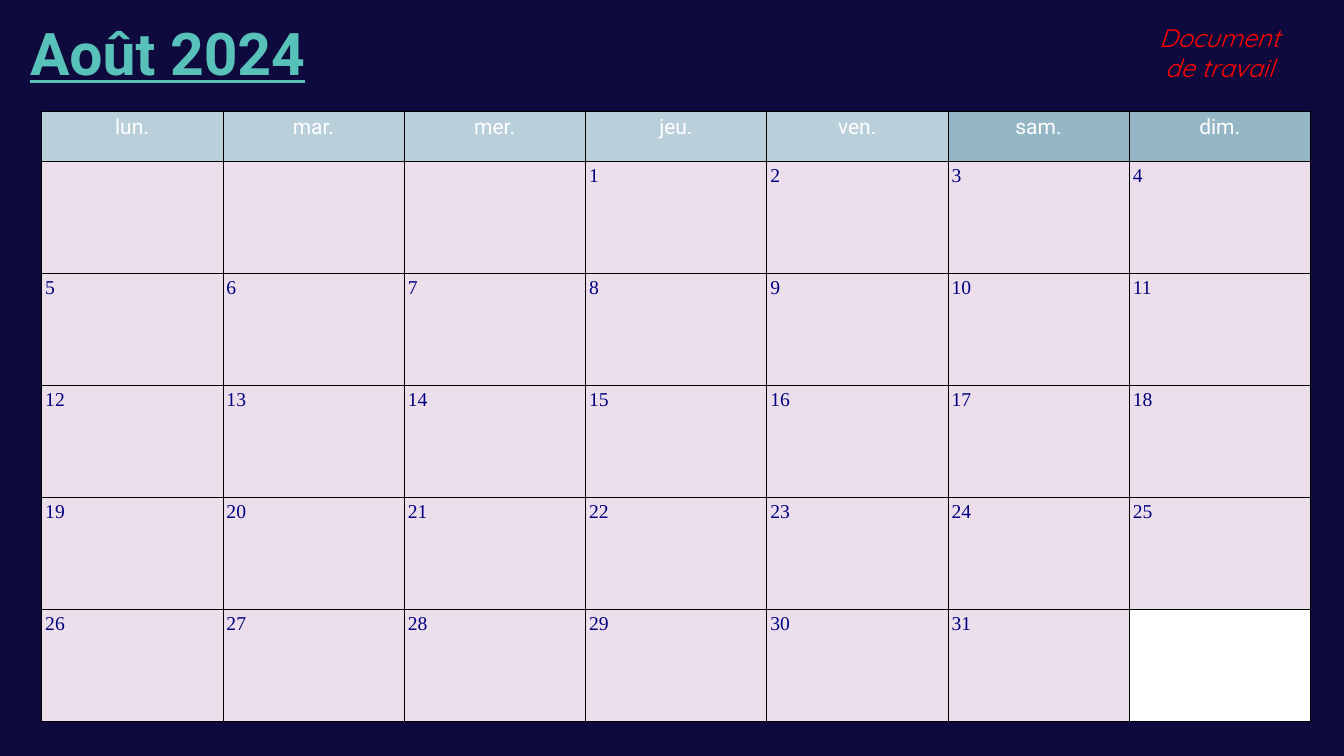
"""Build a calendar slide for August 2024."""
from dataclasses import dataclass

import lxml.etree
import pptx
import pptx.dml.color
import pptx.enum.shapes
import pptx.enum.text
import pptx.oxml.ns
import pptx.util

Pt = pptx.util.Pt
RGBColor = pptx.dml.color.RGBColor
Align = pptx.enum.text.PP_ALIGN

NAVY = RGBColor(0x0F, 0x0A, 0x3D)
TEAL = RGBColor(0x58, 0xC1, 0xBA)
RED = RGBColor(0xFF, 0x00, 0x00)
WHITE = RGBColor(0xFF, 0xFF, 0xFF)
BLACK = RGBColor(0x00, 0x00, 0x00)
DAY_BLUE = RGBColor(0x00, 0x00, 0x80)
WEEKDAY_FILL = RGBColor(0xB9, 0xCF, 0xD9)
WEEKEND_FILL = RGBColor(0x95, 0xB6, 0xC5)
DAY_FILL = RGBColor(0xEC, 0xDF, 0xEB)

WEEKDAYS = ("lun.", "mar.", "mer.", "jeu.", "ven.", "sam.", "dim.")
FIRST_SATURDAY_COLUMN = 5
FIRST_DAY_COLUMN = 3
DAYS_IN_MONTH = 31
WEEKS = 5

SLIDE_WIDTH, SLIDE_HEIGHT = 960, 540
TABLE_LEFT, TABLE_TOP = 29.6, 79.4
COLUMN_WIDTH, HEADER_HEIGHT, WEEK_HEIGHT = 129.5, 36, 80
CELL_MARGIN = 2.7
BORDER_WIDTH = 0.25


@dataclass(frozen=True)
class CalendarCell:
    row: int
    column: int
    text: str
    fill: RGBColor
    font: str = "Times New Roman"
    size: float = 14
    color: RGBColor = DAY_BLUE
    align: Align = Align.LEFT


def write_text(frame, text: str, *, font: str, size: float, color: RGBColor,
               align: Align = Align.LEFT, bold: bool = False,
               italic: bool = False, underline: bool = False) -> None:
    para = frame.paragraphs[0]
    para.alignment = align
    span = para.add_run()
    span.text = text
    span.font.name = font
    span.font.size = Pt(size)
    span.font.color.rgb = color
    span.font.bold = bold
    span.font.italic = italic
    span.font.underline = underline


def add_borders(cell) -> None:
    properties = cell._tc.get_or_add_tcPr()
    for position, side in enumerate(("lnL", "lnR", "lnT", "lnB")):
        line = lxml.etree.Element(pptx.oxml.ns.qn(f"a:{side}"), w=str(Pt(BORDER_WIDTH)))
        fill = lxml.etree.SubElement(line, pptx.oxml.ns.qn("a:solidFill"))
        lxml.etree.SubElement(fill, pptx.oxml.ns.qn("a:srgbClr"), val=str(BLACK))
        properties.insert(position, line)


def calendar_cells() -> list[CalendarCell]:
    cells = []
    for column, name in enumerate(WEEKDAYS):
        fill = WEEKEND_FILL if column >= FIRST_SATURDAY_COLUMN else WEEKDAY_FILL
        cells.append(CalendarCell(0, column, name, fill, font="Roboto", size=15,
                                  color=WHITE, align=Align.CENTER))
    for index in range(WEEKS * len(WEEKDAYS)):
        week, column = divmod(index, len(WEEKDAYS))
        day = index - FIRST_DAY_COLUMN + 1
        text = str(day) if 1 <= day <= DAYS_IN_MONTH else ""
        fill = DAY_FILL if day <= DAYS_IN_MONTH else WHITE
        cells.append(CalendarCell(week + 1, column, text, fill))
    return cells


def draw_cell(table, item: CalendarCell) -> None:
    cell = table.cell(item.row, item.column)
    cell.margin_left = cell.margin_right = Pt(CELL_MARGIN)
    cell.margin_top = cell.margin_bottom = Pt(CELL_MARGIN)
    cell.fill.solid()
    cell.fill.fore_color.rgb = item.fill
    add_borders(cell)
    if item.text:
        write_text(cell.text_frame, item.text, font=item.font, size=item.size,
                   color=item.color, align=item.align)


def add_backdrop(page) -> None:
    backdrop = page.shapes.add_shape(pptx.enum.shapes.MSO_SHAPE.RECTANGLE,
                                     0, 0, Pt(SLIDE_WIDTH), Pt(SLIDE_HEIGHT))
    backdrop.shadow.inherit = False
    backdrop.fill.solid()
    backdrop.fill.fore_color.rgb = NAVY
    backdrop.line.fill.background()
    page.shapes.title._element.addprevious(backdrop._element)


def add_calendar(page) -> None:
    table = page.shapes.add_table(
        WEEKS + 1, len(WEEKDAYS), Pt(TABLE_LEFT), Pt(TABLE_TOP),
        Pt(COLUMN_WIDTH * len(WEEKDAYS)),
        Pt(HEADER_HEIGHT + WEEK_HEIGHT * WEEKS)).table
    for column in table.columns:
        column.width = Pt(COLUMN_WIDTH)
    for index, row in enumerate(table.rows):
        row.height = Pt(WEEK_HEIGHT if index else HEADER_HEIGHT)
    for item in calendar_cells():
        draw_cell(table, item)


def add_title(page) -> None:
    title = page.shapes.title
    title.left, title.top = Pt(14.4), Pt(8.6)
    title.width, title.height = Pt(741), Pt(110)
    title.text_frame.vertical_anchor = pptx.enum.text.MSO_ANCHOR.TOP
    write_text(title.text_frame, "Août 2024", font="Roboto", size=42,
               color=TEAL, bold=True, underline=True)


def add_draft_mark(page) -> None:
    box = page.shapes.add_textbox(Pt(811.5), Pt(12.2), Pt(119), Pt(51))
    box.text_frame.word_wrap = True
    box.text_frame.auto_size = pptx.enum.text.MSO_AUTO_SIZE.SHAPE_TO_FIT_TEXT
    write_text(box.text_frame, "Document de travail", font="Quicksand", size=18,
               color=RED, align=Align.CENTER, italic=True)


def main() -> None:
    deck = pptx.Presentation()
    deck.slide_width, deck.slide_height = Pt(SLIDE_WIDTH), Pt(SLIDE_HEIGHT)
    page = deck.slides.add_slide(deck.slide_layouts.get_by_name("Title Only"))
    page.background.fill.solid()
    page.background.fill.fore_color.rgb = BLACK
    add_backdrop(page)
    add_calendar(page)
    add_title(page)
    add_draft_mark(page)
    deck.save("out.pptx")


if __name__ == "__main__":
    main()
